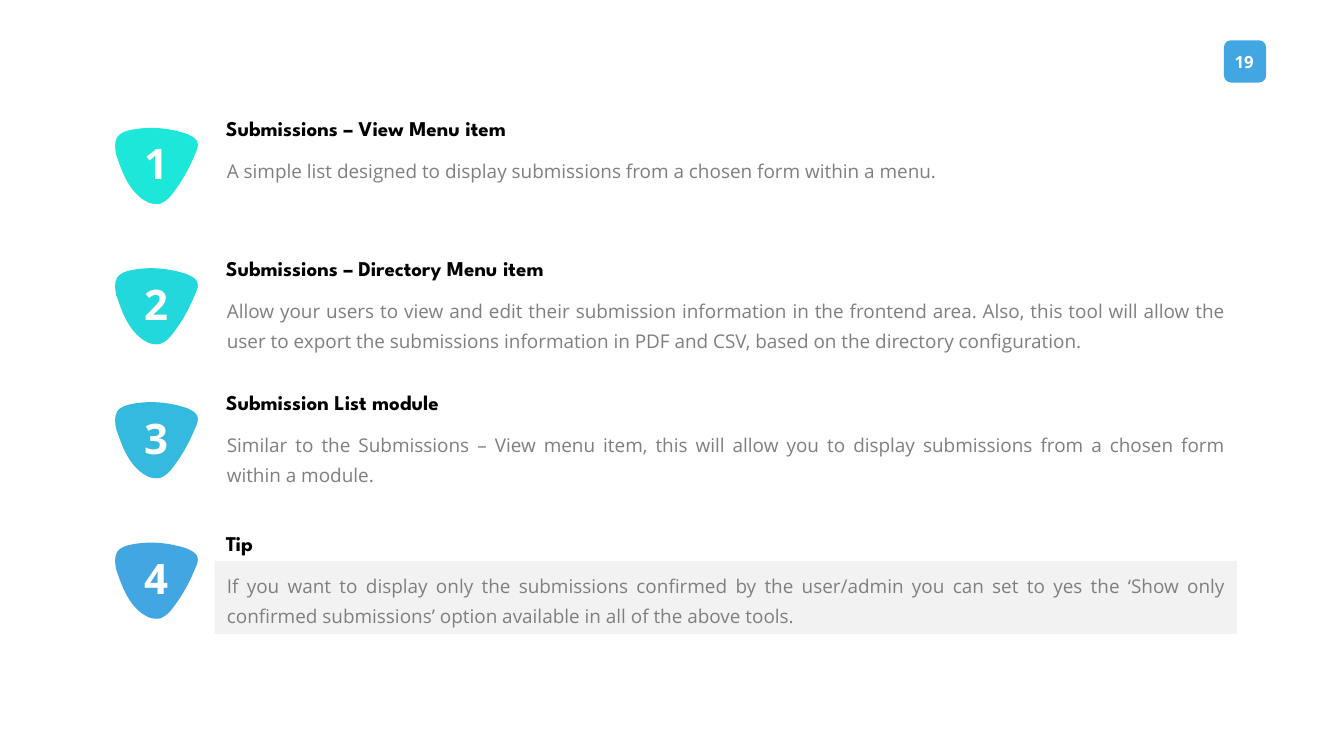
"""Build the numbered overview slide of the submission display tools."""
from lxml.etree import SubElement
from pptx import Presentation
from pptx.dml.color import RGBColor
from pptx.enum.shapes import MSO_SHAPE
from pptx.enum.text import MSO_ANCHOR, PP_ALIGN
from pptx.oxml.ns import qn
from pptx.util import Cm, Pt


def paint(shape, color):
    shape.shadow.inherit = False
    shape.fill.solid()
    shape.fill.fore_color.rgb = RGBColor.from_string(color)
    shape.line.fill.background()


def write(shape, text, size, color, font="Open Sans", bold=False, align=PP_ALIGN.LEFT,
          anchor=MSO_ANCHOR.MIDDLE, inset=(0.25, 0.13), spacing=None, wrap=False):
    frame = shape.text_frame
    frame.word_wrap = wrap
    frame.vertical_anchor = anchor
    frame.margin_left = frame.margin_right = Cm(inset[0])
    frame.margin_top = frame.margin_bottom = Cm(inset[1])
    paragraph = frame.paragraphs[0]
    paragraph.alignment = align
    paragraph.line_spacing = spacing
    run = paragraph.add_run()
    run.text = text
    run.font.name = font
    run.font.size = Pt(size)
    run.font.bold = bold
    run.font.color.rgb = RGBColor.from_string(color)


BADGE_SIZE = (165, 160)
BADGE_START = (91, 160)
BADGE_CURVES = [
    ((72, 160), (52, 156), (35, 153)),
    ((23, 149), (12, 145), (5, 134)),
    ((0, 124), (3, 111), (7, 100)),
    ((19, 65), (41, 34), (68, 10)),
    ((74, 6), (81, 0), (89, 0)),
    ((89, 0), (90, 0), (91, 0)),
    ((99, 1), (105, 8), (109, 14)),
    ((128, 38), (143, 62), (155, 90)),
    ((160, 101), (164, 112), (162, 125)),
    ((159, 134), (151, 144), (142, 148)),
    ((127, 157), (109, 160), (91, 160)),
]

ITEMS = [
    (5.69, 16.36, 2.13, "1DE7D8", None, "Submissions – View Menu item",
     "A simple list designed to display submissions from a chosen form within a menu."),
    (12.76, 18.62, 3.68, "23D8DC", None, "Submissions – Directory Menu item",
     "Allow your users to view and edit their submission information in the frontend area. "
     "Also, this tool will allow the user to export the submissions information in PDF and CSV, "
     "based on the directory configuration."),
    (19.51, 12.88, 3.68, "34B9DF", None, "Submission List module",
     "Similar to the Submissions – View menu item, this will allow you to display submissions "
     "from a chosen form within a module."),
    (26.59, 2.11, 3.68, "42A6E3", "F2F2F2", "Tip",
     "If you want to display only the submissions confirmed by the user/admin you can set to yes "
     "the ‘Show only confirmed submissions’ option available in all of the above tools."),
]

presentation = Presentation()
presentation.slide_width = Cm(67.72)
presentation.slide_height = Cm(38.1)
slide = presentation.slides.add_slide(presentation.slide_layouts[6])
shapes = slide.shapes

page_badge = shapes.add_shape(MSO_SHAPE.ROUNDED_RECTANGLE, Cm(61.67), Cm(2.03), Cm(2.13), Cm(2.13))
paint(page_badge, "42A6E3")
page_number = shapes.add_textbox(Cm(61.6), Cm(2.36), Cm(2.18), Cm(1.55))
write(page_number, "19", 24, "FFFFFF", bold=True, align=PP_ALIGN.CENTER, wrap=True)

for number, item in enumerate(ITEMS, start=1):
    top, heading_width, height, color, panel, heading, description = item

    builder = shapes.build_freeform(*BADGE_START)
    builder.add_line_segments([curve[-1] for curve in BADGE_CURVES])
    badge = builder.convert_to_shape()
    outline = badge.element.find(".//" + qn("a:path"))
    for segment in list(outline):
        outline.remove(segment)
    for name, size in zip("wh", BADGE_SIZE):
        outline.set(name, str(size))
    for tag, points in [("a:moveTo", [BADGE_START])] + [("a:cubicBezTo", curve) for curve in BADGE_CURVES]:
        segment = SubElement(outline, qn(tag))
        for x, y in points:
            SubElement(segment, qn("a:pt"), x=str(x), y=str(y))
    SubElement(outline, qn("a:close"))
    badge.left, badge.top = Cm(5.97), Cm(top + 0.23)
    badge.width, badge.height = Cm(4.19), Cm(4.06)
    badge.rotation = 60.4
    paint(badge, color)

    number_box = shapes.add_textbox(Cm(7.01), Cm(top + 1.12), Cm(1.73), Cm(2.82))
    write(number_box, str(number), 60, "FFFFFF", bold=True)

    heading_box = shapes.add_textbox(Cm(11.13), Cm(top), Cm(heading_width), Cm(1.55))
    write(heading_box, heading, 30, "000000", font="League Spartan", bold=True)

    description_box = shapes.add_textbox(Cm(10.82), Cm(top + 1.68), Cm(51.51), Cm(height))
    if panel:
        paint(description_box, panel)
    write(description_box, description, 27, "7F7F7F", align=PP_ALIGN.JUSTIFY,
          anchor=MSO_ANCHOR.TOP, inset=(0.61, 0.3), spacing=Pt(43), wrap=True)

presentation.save("out.pptx")
